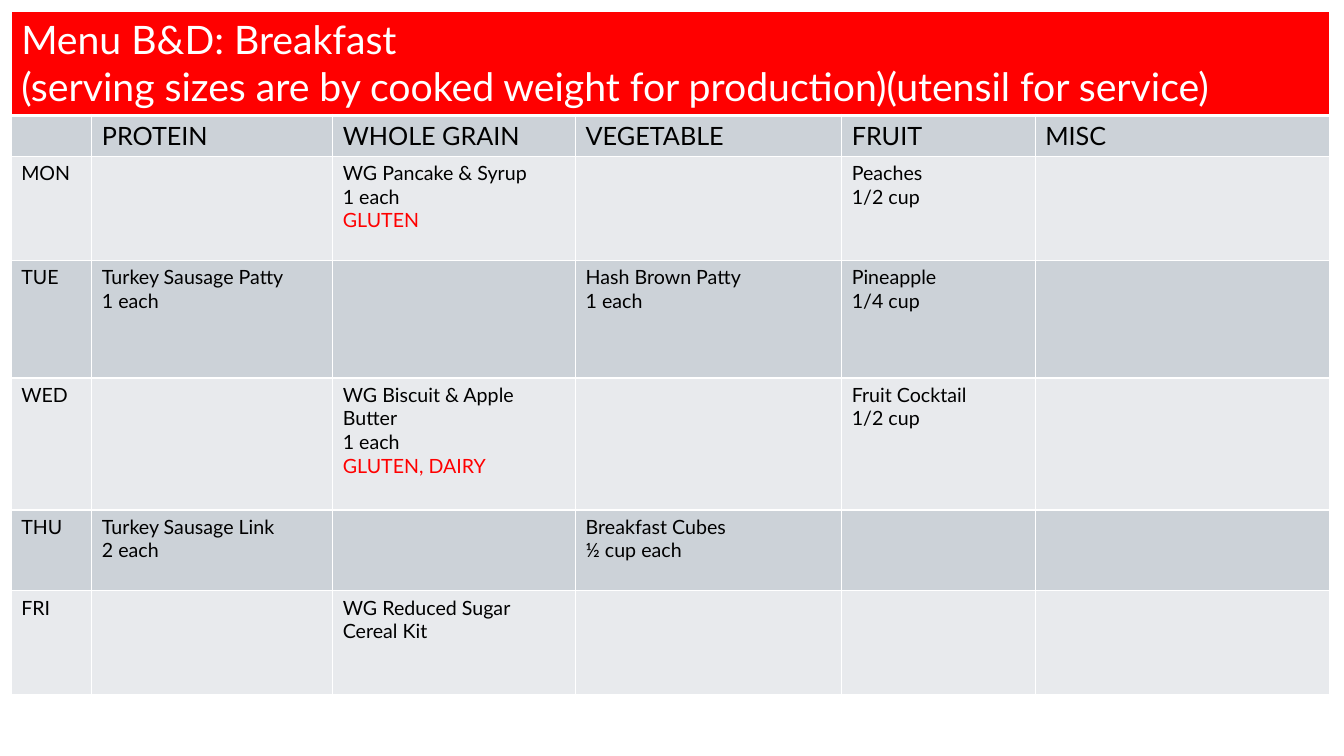
from dataclasses import dataclass

from lxml.etree import SubElement
from pptx import Presentation
from pptx.dml.color import RGBColor
from pptx.oxml.ns import qn
from pptx.util import Pt


@dataclass(frozen=True)
class Theme:
    font: str = "Lato"
    banner: str = "FF0000"
    allergen: str = "FF0000"
    light: str = "FFFFFF"
    ink: str = "000000"
    bands: tuple = ("E8EAED", "CCD2D8")
    title_size: float = 28
    header_size: float = 18
    body_size: float = 14
    rule: float = 1
    banner_rule: float = 3


THEME = Theme()
TITLE = [
    "Menu B&D: Breakfast",
    "(serving sizes are by cooked weight for production)(utensil for service)",
]
HEADERS = ["", "PROTEIN", "WHOLE GRAIN", "VEGETABLE", "FRUIT", "MISC"]
MENU = {
    "MON": {
        "WHOLE GRAIN": ["WG Pancake & Syrup", "1 each", "GLUTEN"],
        "FRUIT": ["Peaches", "1/2 cup"],
    },
    "TUE": {
        "PROTEIN": ["Turkey Sausage Patty", "1 each"],
        "VEGETABLE": ["Hash Brown Patty", "1 each"],
        "FRUIT": ["Pineapple", "1/4 cup"],
    },
    "WED": {
        "WHOLE GRAIN": ["WG Biscuit & Apple Butter", "1 each", "GLUTEN, DAIRY"],
        "FRUIT": ["Fruit Cocktail", "1/2 cup"],
    },
    "THU": {
        "PROTEIN": ["Turkey Sausage Link", "2 each"],
        "VEGETABLE": ["Breakfast Cubes", "½ cup each"],
    },
    "FRI": {"WHOLE GRAIN": ["WG Reduced Sugar Cereal Kit"]},
}
ALLERGENS = {"GLUTEN", "GLUTEN, DAIRY"}
COLUMN_WIDTHS = [57.6, 172.1, 173.5, 190.1, 138.2, 210.2]
ROW_HEIGHTS = [74.2, 28.8, 74.2, 84.2, 94.3, 57.6, 74.2]


def write_lines(cell, lines, size, color):
    frame = cell.text_frame
    for index, line in enumerate(lines):
        para = frame.add_paragraph() if index else frame.paragraphs[0]
        para.font.size = Pt(size)
        if not line:
            continue
        span = para.add_run()
        span.text = line
        span.font.name = THEME.font
        span.font.size = Pt(size)
        shade = THEME.allergen if line in ALLERGENS else color
        span.font.color.rgb = RGBColor.from_string(shade)


def style_cell(cell, fill, bottom_rule=THEME.rule):
    properties = cell._tc.get_or_add_tcPr()
    for side in "LRTB":
        width = bottom_rule if side == "B" else THEME.rule
        line = SubElement(properties, qn(f"a:ln{side}"), w=str(Pt(width)))
        paint = SubElement(line, qn("a:solidFill"))
        SubElement(paint, qn("a:srgbClr"), val=THEME.light)
    cell.fill.solid()
    cell.fill.fore_color.rgb = RGBColor.from_string(fill)


def add_banner(table):
    for cell in table.rows[0].cells:
        style_cell(cell, THEME.banner, THEME.banner_rule)
    first = table.cell(0, 0)
    first.merge(table.cell(0, len(HEADERS) - 1))
    write_lines(first, TITLE, THEME.title_size, THEME.light)


def add_menu_rows(table):
    rows = [[[name] for name in HEADERS]]
    for day, dishes in MENU.items():
        rows.append([[day]] + [dishes.get(name, [""]) for name in HEADERS[1:]])
    for row, entries in enumerate(rows, start=1):
        size = THEME.header_size if row == 1 else THEME.body_size
        for column, lines in enumerate(entries):
            cell = table.cell(row, column)
            style_cell(cell, THEME.bands[row % 2])
            write_lines(cell, lines, size, THEME.ink)


def add_menu_table(page, left, top):
    frame = page.shapes.add_table(
        len(ROW_HEIGHTS), len(COLUMN_WIDTHS), Pt(left), Pt(top),
        Pt(sum(COLUMN_WIDTHS)), Pt(sum(ROW_HEIGHTS)),
    )
    table = frame.table
    for column, width in zip(table.columns, COLUMN_WIDTHS):
        column.width = Pt(width)
    for row, height in zip(table.rows, ROW_HEIGHTS):
        row.height = Pt(height)
    add_banner(table)
    add_menu_rows(table)


def main():
    deck = Presentation()
    deck.slide_width, deck.slide_height = Pt(960), Pt(540)
    page = deck.slides.add_slide(deck.slide_layouts[6])
    add_menu_table(page, left=8, top=8)
    deck.save("out.pptx")


if __name__ == "__main__":
    main()
